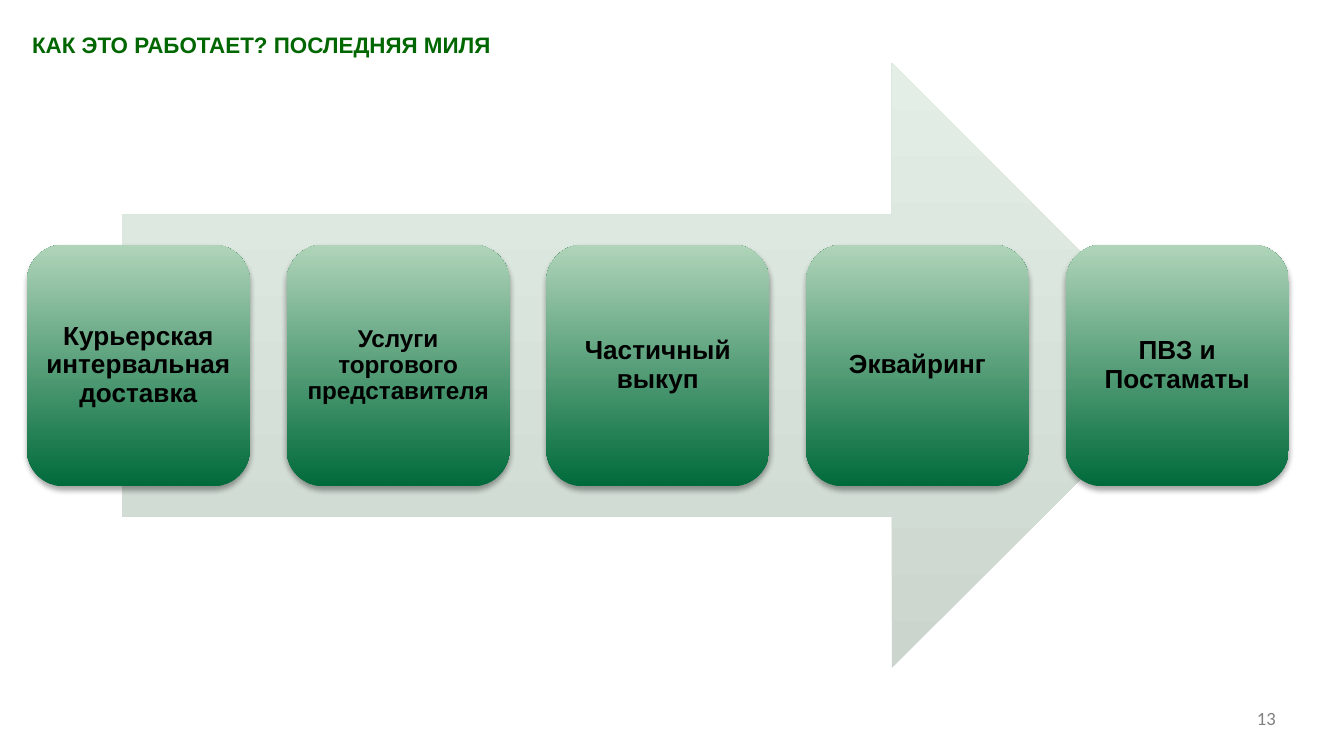
from collections import namedtuple

from lxml.etree import SubElement
from pptx import Presentation
from pptx.dml.color import RGBColor
from pptx.enum.shapes import MSO_SHAPE as Preset
from pptx.enum.text import MSO_ANCHOR as Anchor, PP_ALIGN as Align
from pptx.oxml.ns import qn
from pptx.util import Inches, Pt

Box = namedtuple("Box", "left top width height")

COLUMNS, ROWS = 100, 56.25
CELL = Inches(0.1)

COLORS = {
    "title": "006600",
    "page": "808080",
    "label": "000000",
    "shadow": "000000",
    "arrow_bottom": "CBD5CE",
    "arrow_top": "E3EFE6",
    "card_bottom": "006A3B",
    "card_top": "B0D4B9",
}

SERVICES = [
    ("Курьерская интервальная доставка", 14),
    ("Услуги торгового представителя", 13),
    ("Частичный выкуп", 14),
    ("Эквайринг", 14),
    ("ПВЗ и Постаматы", 14),
]


def place(box):
    """Turn a box in grid cells into slide lengths."""
    return [round(cells * CELL) for cells in box]


def write(frame, words, size, color, font="Arial", bold=True, align=Align.LEFT):
    """Write one styled run into a wrapping text frame."""
    frame.word_wrap = True
    paragraph = frame.paragraphs[0]
    paragraph.alignment = align
    run = paragraph.add_run()
    run.text = words
    run.font.name, run.font.size, run.font.bold = font, Pt(size), bold
    run.font.color.rgb = RGBColor.from_string(COLORS[color])
    return paragraph


def add_caption(slide, box, words, size, color, **style):
    """Place a line of free text in its box."""
    caption = slide.shapes.add_textbox(*place(box))
    write(caption.text_frame, words, size, color, **style)


def add_gradient_shape(slide, preset, box, part):
    """Place an unlined shape shaded from its bottom to its top colour."""
    shape = slide.shapes.add_shape(preset, *place(box))
    shape.shadow.inherit = False
    shape.line.fill.background()
    shape.fill.gradient()
    shape.fill.gradient_angle = 90
    for stop, edge in zip(shape.fill.gradient_stops, ("bottom", "top")):
        stop.color.rgb = RGBColor.from_string(COLORS[f"{part}_{edge}"])
    return shape


def drop_shadow(shape):
    """Give a shape a soft shadow straight below it."""
    effects = shape.fill._xPr.find(qn("a:effectLst"))
    shadow = SubElement(effects, qn("a:outerShdw"), blurRad=str(Pt(3.1)),
                        dist=str(Pt(1.8)), dir="5400000", rotWithShape="0")
    color = SubElement(shadow, qn("a:srgbClr"), val=COLORS["shadow"])
    SubElement(color, qn("a:alpha"), val="35000")


def add_card(slide, box, service, size):
    """Place one service card with its centred label."""
    card = add_gradient_shape(slide, Preset.ROUNDED_RECTANGLE, box, "card")
    drop_shadow(card)
    frame = card.text_frame
    frame.vertical_anchor = Anchor.MIDDLE
    inset = Pt(size * 0.3)
    frame.margin_left = frame.margin_right = inset
    frame.margin_top = frame.margin_bottom = inset
    label = write(frame, service, size, "label", align=Align.CENTER)
    label.line_spacing = 0.9


def add_process(slide, box):
    """Place the wide arrow and the evenly spaced cards over it."""
    arrow_width, card_width, card_height = box.width * 0.85, 16.6, box.height * 0.4
    arrow_left = box.left + (box.width - arrow_width) / 2
    add_gradient_shape(slide, Preset.RIGHT_ARROW,
                       Box(arrow_left, box.top, arrow_width, box.height), "arrow")
    pitch = (box.width - card_width) / (len(SERVICES) - 1)
    card_top = box.top + (box.height - card_height) / 2
    for step, (service, size) in enumerate(SERVICES):
        card_box = Box(box.left + step * pitch, card_top, card_width, card_height)
        add_card(slide, card_box, service, size)


def main():
    """Build the last-mile slide and save it."""
    deck = Presentation()
    deck.slide_width, deck.slide_height = place((COLUMNS, ROWS))
    slide = deck.slides.add_slide(deck.slide_layouts[6])
    add_caption(slide, Box(83.7, 52.1, 12.2, 3), "13", 10, "page",
                font="Calibri", bold=False, align=Align.RIGHT)
    add_caption(slide, Box(1.4, 1.8, 67.9, 5),
                "КАК ЭТО РАБОТАЕТ? ПОСЛЕДНЯЯ МИЛЯ", 12, "title")
    add_process(slide, Box(2, 4.7, 93.9, 45))
    deck.save("out.pptx")


if __name__ == "__main__":
    main()
